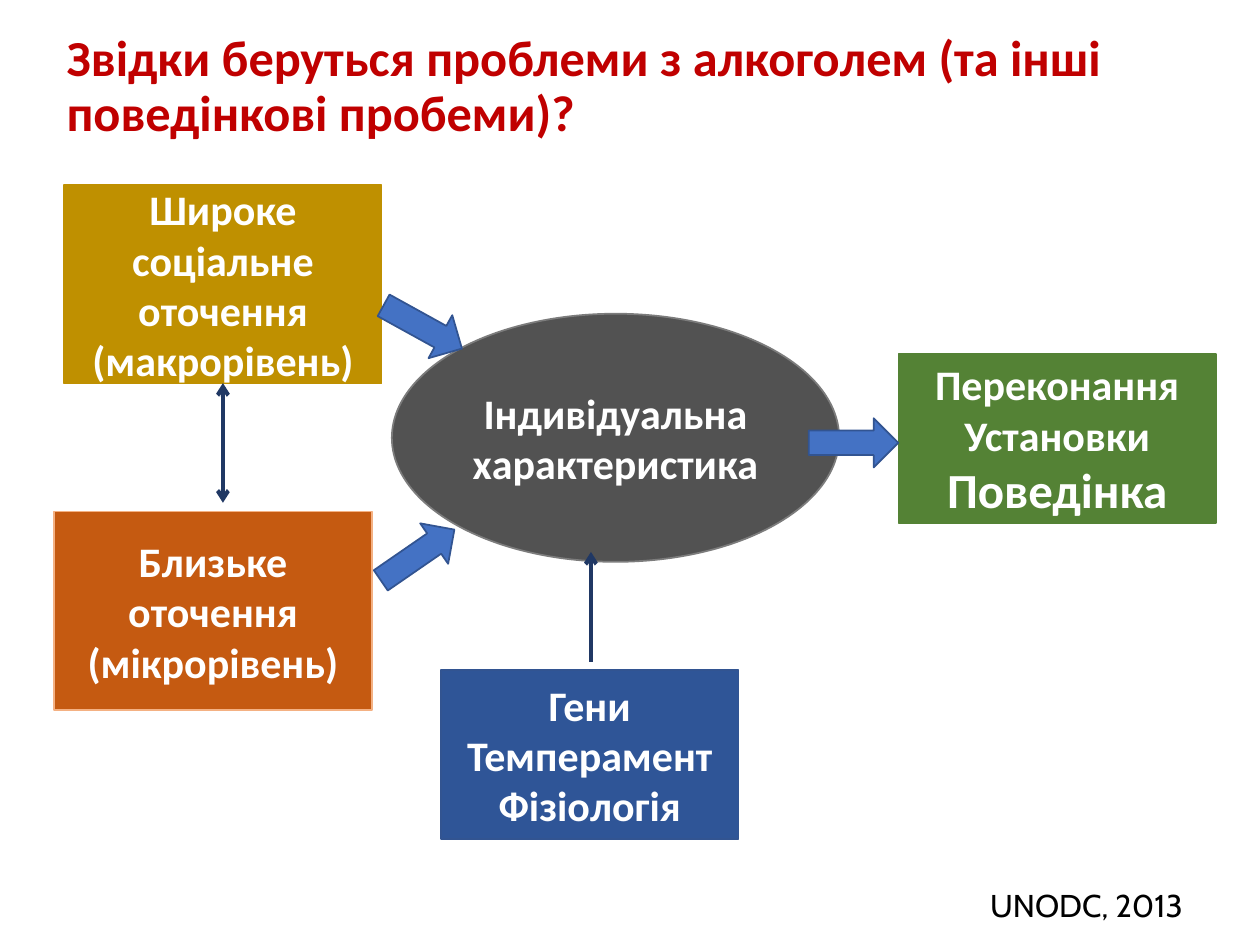
from lxml.etree import SubElement
from pptx import Presentation
from pptx.dml.color import RGBColor
from pptx.enum.shapes import MSO_CONNECTOR, MSO_SHAPE as SHAPE
from pptx.enum.text import MSO_ANCHOR as ANCHOR, PP_ALIGN as ALIGN
from pptx.oxml.ns import qn
from pptx.util import Pt

COLORS = {
    "title": "C00000", "white": "FFFFFF", "black": "000000",
    "grey": "525252", "grey_line": "7C7C7C", "gold": "BF9000",
    "orange": "C55A11", "peach": "F4B183", "blue": "2F5597",
    "blue_line": "325491", "green": "548235", "arrow": "4472C4",
    "navy": "203864",
}

TITLE = "Звідки беруться проблеми з алкоголем (та інші поведінкові пробеми)?"
SOURCE = "UNODC, 2013"

# shape, (left, top, width, height), fill, line, [(text, size)]
FACTORS = [
    (SHAPE.OVAL, (223.9, 179.3, 255.6, 141.8), "grey", "grey_line",
     [("Індивідуальна характеристика", 24)]),
    (SHAPE.RECTANGLE, (36.7, 105.8, 181.4, 113.4), "gold", "gold",
     [("Широке соціальне оточення", 24), ("(макрорівень)", 24)]),
    (SHAPE.RECTANGLE, (31, 292.3, 181.4, 113.4), "orange", "peach",
     [("Близьке оточення", 24), ("(мікрорівень)", 24)]),
    (SHAPE.RECTANGLE, (252, 383, 170, 96.5), "blue", "blue_line",
     [("Гени", 24), ("Темперамент", 24), ("Фізіологія", 24)]),
    (SHAPE.RECTANGLE, (513.4, 202.3, 181.4, 96.5), "green", "green",
     [("Переконання", 24), ("Установки", 24), ("Поведінка", 28)]),
]

# left, top, rotation
BLOCK_ARROWS = [(213.1, 303.1, 325.4), (216, 172.8, 28.9), (462.2, 239, 0)]
BLOCK_ARROW_SIZE = (51.1, 28.1)

# start, end, ends with an arrowhead
THIN_ARROWS = [
    ((127.4, 218.9), (127.4, 287.3), ("headEnd", "tailEnd")),
    ((337.7, 378), (337.7, 315.4), ("tailEnd",)),
]


def rgb(name):
    return RGBColor.from_string(COLORS[name])


def points(values):
    return [Pt(v) for v in values]


def write(p, text, color, **font):
    r = p.add_run()
    r.text = text
    r.font.color.rgb = rgb(color)
    for name, value in font.items():
        setattr(r.font, name, value)


def add_text(s, box, text, color, wrap, anchor, **font):
    tf = s.shapes.add_textbox(*points(box)).text_frame
    tf.word_wrap, tf.vertical_anchor = wrap, anchor
    write(tf.paragraphs[0], text, color, **font)
    return tf.paragraphs[0]


def add_filled(s, kind, box, fill, line):
    sp = s.shapes.add_shape(kind, *points(box))
    sp.shadow.inherit = False
    sp.fill.solid()
    sp.fill.fore_color.rgb = rgb(fill)
    sp.line.color.rgb = rgb(line)
    sp.line.width = Pt(1)
    return sp


def add_factor(s, kind, box, fill, line, lines):
    tf = add_filled(s, kind, box, fill, line).text_frame
    tf.word_wrap, tf.vertical_anchor = True, ANCHOR.MIDDLE
    for i, (text, size) in enumerate(lines):
        p = tf.add_paragraph() if i else tf.paragraphs[0]
        p.alignment = ALIGN.CENTER
        write(p, text, "white", size=Pt(size), name="Calibri", bold=True)


def add_thin_arrow(s, start, end, heads):
    c = s.shapes.add_connector(MSO_CONNECTOR.STRAIGHT, *points(start + end))
    c.line.color.rgb = rgb("navy")
    c.line.width = Pt(2.25)
    ln = c.line._get_or_add_ln()
    for head in heads:
        SubElement(ln, qn("a:" + head), type="arrow")
    SubElement(c._element.spPr, qn("a:effectLst"))


def main():
    prs = Presentation()
    prs.slide_width, prs.slide_height = Pt(720), Pt(540)
    s = prs.slides.add_slide(prs.slide_layouts[6])

    p = add_text(s, (31, 15.1, 648, 69.8), TITLE, "title", True, ANCHOR.MIDDLE,
                 size=Pt(28.8), name="Calibri", bold=True)
    p.line_spacing = 0.9
    for factor in FACTORS:
        add_factor(s, *factor)
    for left, top, rotation in BLOCK_ARROWS:
        sp = add_filled(s, SHAPE.RIGHT_ARROW, (left, top, *BLOCK_ARROW_SIZE),
                        "arrow", "blue_line")
        sp.rotation = rotation
    for arrow in THIN_ARROWS:
        add_thin_arrow(s, *arrow)
    add_text(s, (558.7, 502.6, 131.8, 28.8), SOURCE, "black", False, ANCHOR.TOP,
             size=Pt(18), name="Cabin")

    prs.save("out.pptx")


if __name__ == "__main__":
    main()
